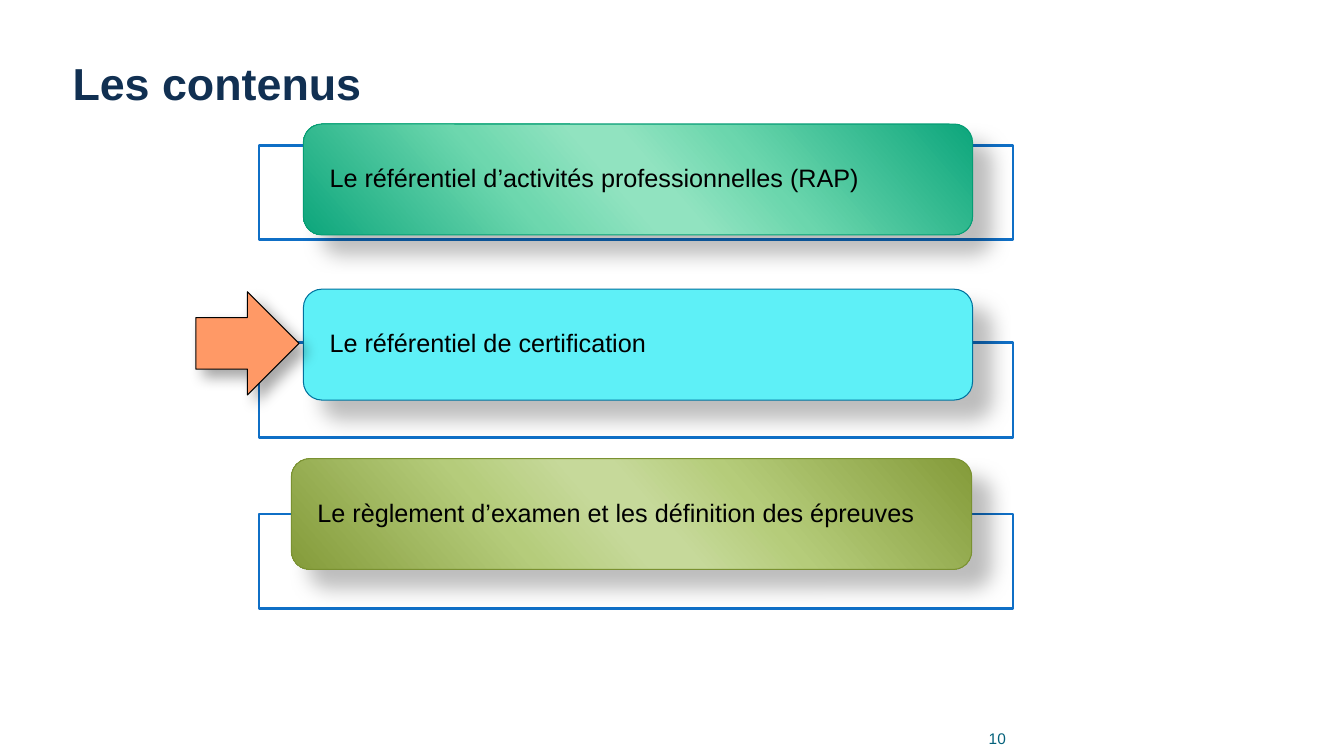
from lxml import etree
from pptx import Presentation
from pptx.dml.color import RGBColor
from pptx.enum.shapes import MSO_SHAPE
from pptx.enum.text import MSO_ANCHOR, PP_ALIGN
from pptx.oxml.ns import qn
from pptx.util import Pt

COLORS = {
    "title": "113052", "number": "04617B", "text": "000000",
    "frame": "0F6FC6", "white": "FFFFFF", "arrow": "FF9966", "shadow": "000000",
}
STOPS = [0, 33, 47, 53, 68, 100]
GREEN = ["0DA67C", "6BD6AD", "91E3C0", "91E3C0", "6DD7AE", "0DA67C"]
OLIVE = ["849B3A", "B5CC7A", "C6D99A", "C6D99A", "B5CC7B", "849B3A"]

# text, frame top, box left, box top, box width, fill colours, line colour
CONTENTS = [
    ("Le référentiel d’activités professionnelles (RAP)",
     103.7, 216.7, 88.6, 478, GREEN, "059D74"),
    ("Le référentiel de certification",
     244.8, 216.7, 206.6, 478, ["5EF0F7"], "00729E"),
    ("Le règlement d’examen et les définition des épreuves",
     367.2, 208.1, 327.6, 486, OLIVE, "7A9131"),
]


def add_color(parent, color, alpha=100):
    clr = etree.SubElement(parent, qn("a:srgbClr"), val=color)
    if alpha < 100:
        etree.SubElement(clr, qn("a:alpha"), val=str(alpha * 1000))


def add_block(kind, left, top, width, height, fills, line, weight, shadow=None):
    """Draw a filled shape; shadow is (opacity %, blur pt, distance pt)."""
    s = slide.shapes.add_shape(kind, Pt(left), Pt(top), Pt(width), Pt(height))
    if len(fills) == 1:
        s.fill.solid()
        s.fill.fore_color.rgb = RGBColor.from_string(fills[0])
    else:
        s.fill.gradient()
        s.fill.gradient_angle = 221
        stops = s._element.spPr.find(".//" + qn("a:gsLst"))
        for stop in list(stops):
            stops.remove(stop)
        for pos, color in zip(STOPS, fills):
            add_color(etree.SubElement(stops, qn("a:gs"), pos=str(pos * 1000)), color)
    s.line.color.rgb = RGBColor.from_string(line)
    s.line.width = Pt(weight)
    s.shadow.inherit = False
    if shadow:
        alpha, blur, dist = shadow
        outer = etree.SubElement(
            s._element.spPr.find(qn("a:effectLst")), qn("a:outerShdw"),
            blurRad=str(Pt(blur)), dist=str(Pt(dist)), dir=str(45 * 60000),
            algn="tl", rotWithShape="0")
        add_color(outer, COLORS["shadow"], alpha)
    return s


prs = Presentation()
prs.slide_width, prs.slide_height = Pt(960), Pt(540)
slide = prs.slides.add_slide(prs.slide_layouts[5])

# Title
title = slide.shapes.title
title.left, title.top, title.width, title.height = Pt(48.2), Pt(25.2), Pt(760.3), Pt(90)
tf = title.text_frame
tf.text = "Les contenus"
tf.vertical_anchor = MSO_ANCHOR.BOTTOM
tf.margin_left = tf.margin_right = Pt(3.6)
tf.margin_top, tf.margin_bottom = 0, Pt(37)
p = tf.paragraphs[0]
p.alignment = PP_ALIGN.LEFT
r = p.runs[0]
r.font.name, r.font.size, r.font.bold = "Arial", Pt(32), True
r.font.color.rgb = RGBColor.from_string(COLORS["title"])

# Slide number
number = slide.shapes.add_textbox(Pt(656.6), Pt(516.2), Pt(61.9), Pt(18))
tf = number.text_frame
tf.word_wrap = True
tf.text = "10"
tf.vertical_anchor = MSO_ANCHOR.BOTTOM
tf.margin_left = tf.margin_right = tf.margin_top = tf.margin_bottom = 0
p = tf.paragraphs[0]
p.alignment = PP_ALIGN.RIGHT
r = p.runs[0]
r.font.name, r.font.size = "Arial", Pt(11)
r.font.color.rgb = RGBColor.from_string(COLORS["number"])

# Three contents, each a framed box
for text, frame_top, left, top, width, fills, line in CONTENTS:
    add_block(MSO_SHAPE.RECTANGLE, 185, frame_top, 538.6, 67.7,
              [COLORS["white"]], COLORS["frame"], 2)
    box = add_block(MSO_SHAPE.ROUNDED_RECTANGLE, left, top, width, 79.2,
                    fills, line, 0.75, (26, 15, 18))
    tf = box.text_frame
    tf.word_wrap = True
    tf.text = text
    tf.vertical_anchor = MSO_ANCHOR.MIDDLE
    tf.margin_left = tf.margin_right = Pt(14.8)
    tf.margin_top = tf.margin_bottom = 0
    p = tf.paragraphs[0]
    p.alignment = PP_ALIGN.LEFT
    p.line_spacing = 0.9
    r = p.runs[0]
    r.font.name, r.font.size = "Arial", Pt(18)
    r.font.color.rgb = RGBColor.from_string(COLORS["text"])

# Arrow to the current content
add_block(MSO_SHAPE.RIGHT_ARROW, 139.9, 208.4, 73.7, 73.7,
          [COLORS["arrow"]], COLORS["text"], 0.75, (35, 10.2, 8))

prs.save("out.pptx")
